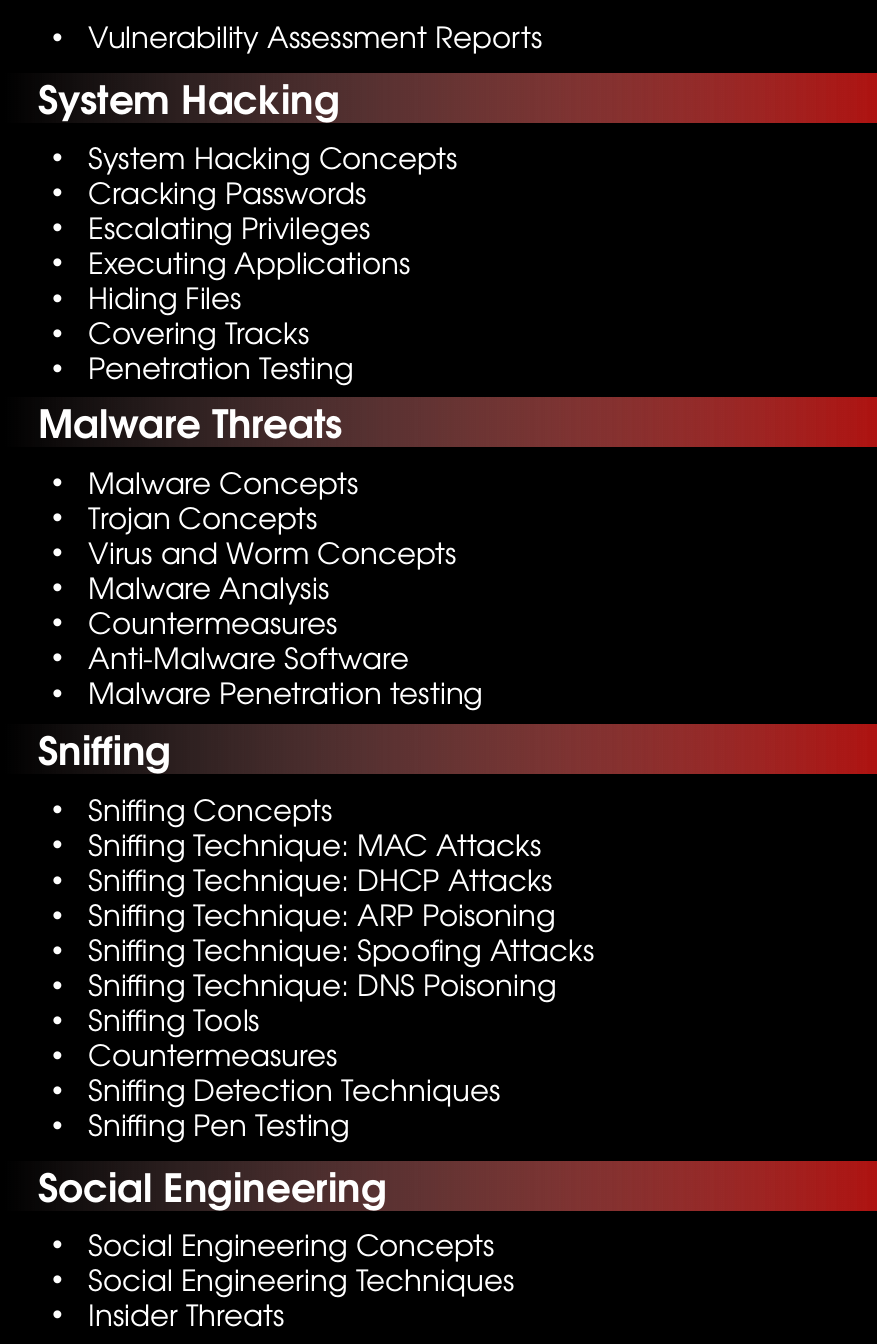
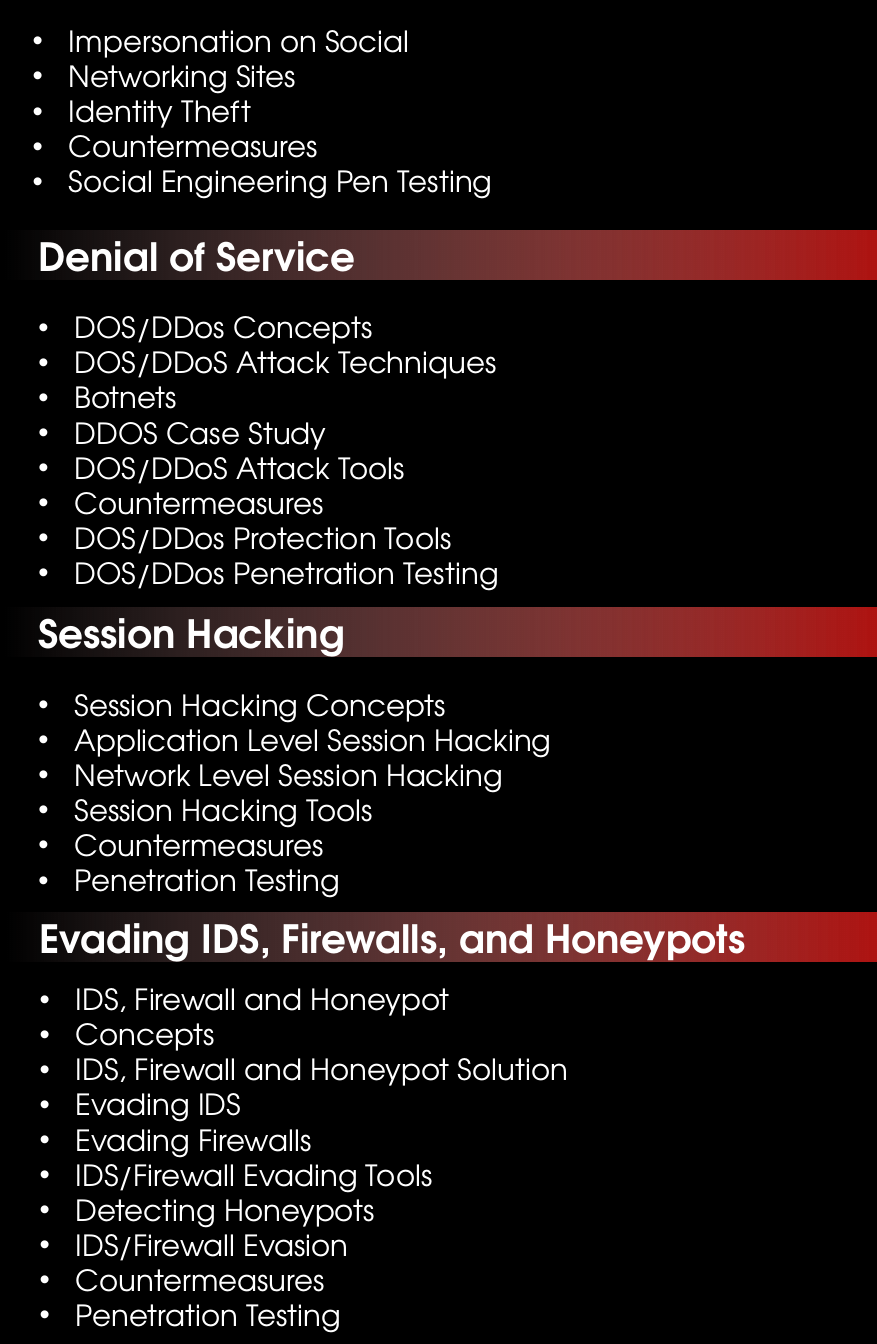
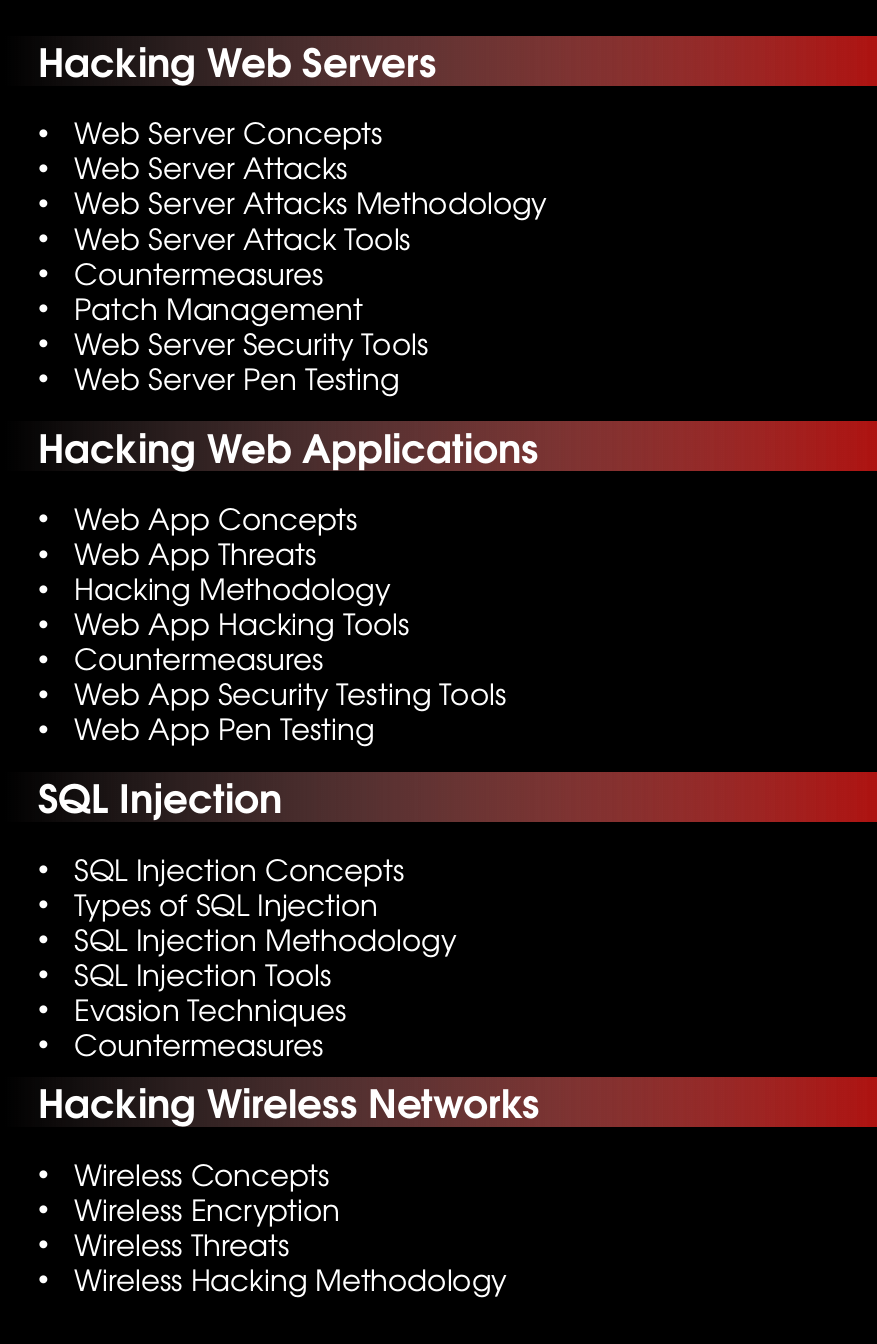
from dataclasses import dataclass
from typing import NamedTuple

from lxml import etree
from pptx import Presentation
from pptx import util as u
from pptx.dml.color import RGBColor
from pptx.enum import shapes, text
from pptx.oxml import ns
from pptx.slide import Slide

PX = 9144
PAGE_WIDTH, PAGE_HEIGHT = 750, 1150
BAND_HEIGHT = 42
HEADING_LEFT, HEADING_RISE, HEADING_HEIGHT = 23, 3, 50
TOPICS_WIDTH, TOPIC_PITCH, TOPIC_INDENT, INSETS = 649, 30.3, 31, 10
FONT = "TeX Gyre Adventor"
COLORS = {"page": "000000", "text": "FFFFFF", "fade": "E8BEBE", "red": "B01513"}


class Box(NamedTuple):
    left: int
    top: int
    width: int
    height: int


@dataclass(frozen=True)
class Topics:
    left: int
    top: int
    names: list[str]


@dataclass(frozen=True)
class Module:
    heading: str
    heading_width: int
    top: int
    topics: list[str]
    topics_left: int = 23
    topics_drop: int = 63
    shift: int = 0


MODULE_PAGES: list[list[Topics | Module]] = [
    [
        Topics(35, 12, ["Vulnerability Assessment Reports"]),
        Module("System Hacking", 283, 63, [
            "System Hacking Concepts",
            "Cracking Passwords",
            "Escalating Privileges",
            "Executing Applications",
            "Hiding Files",
            "Covering Tracks",
            "Penetration Testing",
        ], topics_left=35, topics_drop=52),
        Module("Malware Threats", 291, 340, [
            "Malware Concepts",
            "Trojan Concepts",
            "Virus and Worm Concepts",
            "Malware Analysis",
            "Countermeasures",
            "Anti-Malware Software",
            "Malware Penetration testing",
        ], topics_left=35, topics_drop=53),
        Module("Sniffing", 158, 620, [
            "Sniffing Concepts",
            "Sniffing Technique: MAC Attacks",
            "Sniffing Technique: DHCP Attacks",
            "Sniffing Technique: ARP Poisoning",
            "Sniffing Technique: Spoofing Attacks",
            "Sniffing Technique: DNS Poisoning",
            "Sniffing Tools",
            "Countermeasures",
            "Sniffing Detection Techniques",
            "Sniffing Pen Testing",
        ], topics_left=35, topics_drop=53),
        Module("Social Engineering", 326, 994, [
            "Social Engineering Concepts",
            "Social Engineering Techniques",
            "Insider Threats",
        ], topics_left=35, topics_drop=51),
    ],
    [
        Topics(18, 15, [
            "Impersonation on Social",
            "Networking Sites",
            "Identity Theft",
            "Countermeasures",
            "Social Engineering Pen Testing",
        ]),
        Module("Denial of Service", 300, 197, [
            "DOS/DDos Concepts",
            "DOS/DDoS Attack Techniques",
            "Botnets",
            "DDOS Case Study",
            "DOS/DDoS Attack Tools",
            "Countermeasures",
            "DOS/DDos Protection Tools",
            "DOS/DDos Penetration Testing",
        ]),
        Module("Session Hacking", 288, 520, [
            "Session Hacking Concepts",
            "Application Level Session Hacking",
            "Network Level Session Hacking",
            "Session Hacking Tools",
            "Countermeasures",
            "Penetration Testing",
        ]),
        Module("Evading IDS, Firewalls, and Honeypots", 648, 781, [
            "IDS, Firewall and Honeypot",
            "Concepts",
            "IDS, Firewall and Honeypot Solution",
            "Evading IDS",
            "Evading Firewalls",
            "IDS/Firewall Evading Tools",
            "Detecting Honeypots",
            "IDS/Firewall Evasion",
            "Countermeasures",
            "Penetration Testing",
        ], topics_drop=54, shift=1),
    ],
    [
        Module("Hacking Web Servers", 367, 31, [
            "Web Server Concepts",
            "Web Server Attacks",
            "Web Server Attacks Methodology",
            "Web Server Attack Tools",
            "Countermeasures",
            "Patch Management",
            "Web Server Security Tools",
            "Web Server Pen Testing",
        ]),
        Module("Hacking Web Applications", 452, 361, [
            "Web App Concepts",
            "Web App Threats",
            "Hacking Methodology",
            "Web App Hacking Tools",
            "Countermeasures",
            "Web App Security Testing Tools",
            "Web App Pen Testing",
        ]),
        Module("SQL Injection", 240, 661, [
            "SQL Injection Concepts",
            "Types of SQL Injection",
            "SQL Injection Methodology",
            "SQL Injection Tools",
            "Evasion Techniques",
            "Countermeasures",
        ]),
        Module("Hacking Wireless Networks", 466, 922, [
            "Wireless Concepts",
            "Wireless Encryption",
            "Wireless Threats",
            "Wireless Hacking Methodology",
        ]),
    ],
]


def emu(box: Box) -> list[u.Emu]:
    return [u.Emu(length * PX) for length in box]


def rgb(name: str) -> RGBColor:
    return RGBColor.from_string(COLORS[name])


def add_text(slide: Slide, box: Box, lines: list[str], *, size: int,
             bold: bool = False, wrap: bool = True, bullets: bool = False) -> None:
    frame = slide.shapes.add_textbox(*emu(box)).text_frame
    frame.word_wrap = wrap
    frame.auto_size = text.MSO_AUTO_SIZE.SHAPE_TO_FIT_TEXT
    frame.text = "\n".join(lines)
    for paragraph in frame.paragraphs:
        if bullets:
            properties = paragraph._p.get_or_add_pPr()
            properties.set("marL", str(TOPIC_INDENT * PX))
            properties.set("indent", str(-TOPIC_INDENT * PX))
            etree.SubElement(properties, ns.qn("a:buFont"), typeface="Arial")
            etree.SubElement(properties, ns.qn("a:buChar"), char="•")
        for run in paragraph.runs:
            run.font.name = FONT
            run.font.size = u.Pt(size)
            run.font.bold = bold
            run.font.color.rgb = rgb("text")


def add_band(slide: Slide, left: int, top: int) -> None:
    band = slide.shapes.add_shape(
        shapes.MSO_SHAPE.RECTANGLE, *emu(Box(left, top, PAGE_WIDTH, BAND_HEIGHT)))
    band.shadow.inherit = False
    band.line.fill.background()
    band.fill.gradient()
    band.fill.gradient_angle = 0
    for stop, color, position in zip(band.fill.gradient_stops, ("fade", "red"), (0, 1)):
        stop.color.rgb = rgb(color)
        stop.position = position
    fade = band.element.spPr.find(".//" + ns.qn("a:srgbClr"))
    etree.SubElement(fade, ns.qn("a:alpha"), val="0")


def add_topics(slide: Slide, topics: Topics) -> None:
    height = round(INSETS + TOPIC_PITCH * len(topics.names))
    add_text(slide, Box(topics.left, topics.top, TOPICS_WIDTH, height),
             topics.names, size=18, bullets=True)


def add_module(slide: Slide, module: Module) -> None:
    add_band(slide, module.shift, module.top)
    heading_box = Box(HEADING_LEFT + module.shift, module.top - HEADING_RISE,
                      module.heading_width, HEADING_HEIGHT)
    add_text(slide, heading_box, [module.heading], size=24, bold=True, wrap=False)
    add_topics(slide, Topics(module.topics_left + module.shift,
                             module.top + module.topics_drop, module.topics))


def main() -> None:
    deck = Presentation()
    deck.slide_width = u.Emu(PAGE_WIDTH * PX)
    deck.slide_height = u.Emu(PAGE_HEIGHT * PX)
    page_fill = deck.slide_master.background.fill
    page_fill.solid()
    page_fill.fore_color.rgb = rgb("page")
    for blocks in MODULE_PAGES:
        slide = deck.slides.add_slide(deck.slide_layouts[6])
        for block in blocks:
            if isinstance(block, Module):
                add_module(slide, block)
            else:
                add_topics(slide, block)
    deck.save("out.pptx")


if __name__ == "__main__":
    main()
